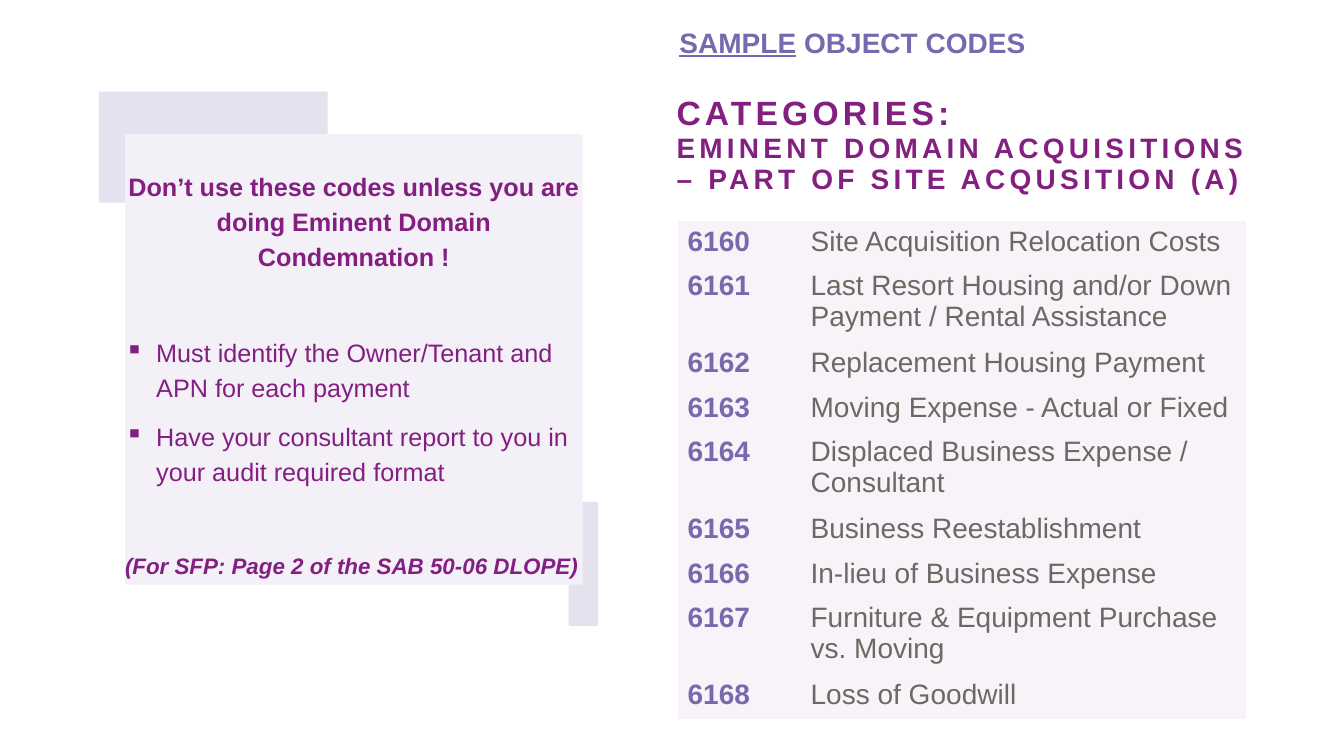
import pptx
import pptx.dml.color
import pptx.enum.shapes
import pptx.enum.text
import pptx.oxml.ns
import pptx.util
from lxml import etree
from pptx.util import Inches

PLUM = "841F82"
VIOLET = "7769AE"
GREY = "6B6963"
LAVENDER = "C5B9D9"
NOTE_FILL = "F3F1F7"
TABLE_FILL = "F7F3F8"

ACCENT_BLOCKS = [(0.98, 0.91, 2.27, 1.1), (5.64, 4.98, 0.29, 1.23)]
BULLET_INDENT = 0.31
ONE_LINE_ROW = 0.44
TWO_LINE_ROW = 0.76
WRAP_LENGTH = 35

OBJECT_CODES = [
    ("6160", "Site Acquisition Relocation Costs"),
    ("6161", "Last Resort Housing and/or Down Payment / Rental Assistance"),
    ("6162", "Replacement Housing Payment"),
    ("6163", "Moving Expense - Actual or Fixed"),
    ("6164", "Displaced Business Expense / Consultant"),
    ("6165", "Business Reestablishment"),
    ("6166", "In-lieu of Business Expense"),
    ("6167", "Furniture & Equipment Purchase vs. Moving"),
    ("6168", "Loss of Goodwill"),
]

BOLD_NOTE = {"size": 18, "bold": True}
PLAIN_NOTE = {"size": 18, "bold": False}
PAGE_NOTE = {"size": 16, "bold": True, "italic": True}
CENTER = pptx.enum.text.PP_ALIGN.CENTER
LEFT = pptx.enum.text.PP_ALIGN.LEFT

# wording, font, alignment, space before, bulleted
NOTES = [
    ("Don’t use these codes unless you are doing Eminent Domain Condemnation !",
     BOLD_NOTE, CENTER, 0, False),
    ("Must identify the Owner/Tenant and APN for each payment",
     PLAIN_NOTE, LEFT, 44, True),
    ("Have your consultant report to you in your audit required format",
     PLAIN_NOTE, LEFT, 10, True),
    ("(For SFP: Page 2 of the SAB 50-06 DLOPE)", PAGE_NOTE, LEFT, 44, False),
]


def rgb(hex_color):
    return pptx.dml.color.RGBColor.from_string(hex_color)


def set_all(target, values):
    for name, value in values.items():
        setattr(target, name, value)


def add_run(paragraph, text, color, size, spacing=None, **font_values):
    """Add a run; spacing is the gap between letters in points."""
    run = paragraph.add_run()
    run.text = text
    set_all(run.font, {"name": "Arial", "size": pptx.util.Pt(size), **font_values})
    run.font.color.rgb = rgb(color)
    if spacing:
        run.font._element.set("spc", str(spacing * 100))


def add_block(slide, bounds, color, alpha=None):
    """Add a plain rectangle; alpha is its opacity in percent."""
    block = slide.shapes.add_shape(
        pptx.enum.shapes.MSO_SHAPE.RECTANGLE, *map(Inches, bounds))
    block.shadow.inherit = False
    block.fill.solid()
    block.fill.fore_color.rgb = rgb(color)
    block.line.fill.background()
    if alpha:
        tint = block._element.spPr.find(".//" + pptx.oxml.ns.qn("a:srgbClr"))
        etree.SubElement(tint, pptx.oxml.ns.qn("a:alpha"), val=str(alpha * 1000))
    return block


def set_frame(frame, left=0, top=0, right=0, bottom=0):
    set_all(frame, {
        "word_wrap": True,
        "vertical_anchor": pptx.enum.text.MSO_ANCHOR.TOP,
        "margin_left": Inches(left), "margin_top": Inches(top),
        "margin_right": Inches(right), "margin_bottom": Inches(bottom),
    })


def add_text_box(slide, bounds, **margins):
    frame = slide.shapes.add_textbox(*map(Inches, bounds)).text_frame
    set_frame(frame, **margins)
    return frame.paragraphs[0]


def add_bullet(paragraph):
    properties = paragraph._p.get_or_add_pPr()
    indent = Inches(BULLET_INDENT)
    properties.set("marL", str(indent))
    properties.set("indent", str(-indent))
    bullet_color = etree.SubElement(properties, pptx.oxml.ns.qn("a:buClr"))
    etree.SubElement(bullet_color, pptx.oxml.ns.qn("a:srgbClr"), val=PLUM)
    etree.SubElement(properties, pptx.oxml.ns.qn("a:buChar"), char="▪")


def add_heading(slide):
    heading = add_text_box(slide, (6.64, 0.2, 5.03, 0.44),
                           left=0.1, top=0.05, right=0.1, bottom=0.05)
    add_run(heading, "SAMPLE", VIOLET, 20, bold=True, underline=True)
    add_run(heading, " OBJECT CODES", VIOLET, 20, bold=True)


def add_title(slide):
    title = add_text_box(slide, (6.71, 0.95, 6.51, 0.81))
    title.line_spacing = 0.93
    add_run(title, "CATEGORIES:", PLUM, 24, spacing=3, bold=True)
    for line in ("EMINENT DOMAIN ACQUISITIONS", "– PART OF SITE ACQUSITION (A)"):
        title.add_line_break()
        add_run(title, line, PLUM, 20, spacing=3, bold=True)


def add_notes(slide):
    frame = add_block(slide, (1.24, 1.33, 4.54, 4.47), NOTE_FILL).text_frame
    set_frame(frame, top=0.33)
    for index, (text, font, alignment, space, bulleted) in enumerate(NOTES):
        note = frame.add_paragraph() if index else frame.paragraphs[0]
        set_all(note, {"alignment": alignment, "line_spacing": 1.15,
                       "space_before": pptx.util.Pt(space)})
        if bulleted:
            add_bullet(note)
        add_run(note, text, PLUM, **font)


def add_code_table(slide):
    heights = [TWO_LINE_ROW if len(name) > WRAP_LENGTH else ONE_LINE_ROW
               for _, name in OBJECT_CODES]
    bounds = (6.72, 2.19, 5.64, sum(heights))
    table = slide.shapes.add_table(len(OBJECT_CODES), 2, *map(Inches, bounds)).table
    set_all(table, {"first_row": False, "horz_banding": False})
    for column, width in zip(table.columns, (1.22, 4.42)):
        column.width = Inches(width)
    for row, height, entry in zip(table.rows, heights, OBJECT_CODES):
        row.height = Inches(height)
        for cell, text, color, bold in zip(row.cells, entry, (VIOLET, GREY), (True, False)):
            cell.fill.solid()
            cell.fill.fore_color.rgb = rgb(TABLE_FILL)
            add_run(cell.text_frame.paragraphs[0], text, color, 20, bold=bold)
    # Borderless cells keep the table one even panel
    for cell in table.iter_cells():
        properties = cell._tc.get_or_add_tcPr()
        for position, side in enumerate(("lnL", "lnR", "lnT", "lnB")):
            border = etree.Element(pptx.oxml.ns.qn("a:" + side), w="0")
            etree.SubElement(border, pptx.oxml.ns.qn("a:noFill"))
            properties.insert(position, border)


def main():
    presentation = pptx.Presentation()
    set_all(presentation, {"slide_width": Inches(13.33), "slide_height": Inches(7.5)})
    slide = presentation.slides.add_slide(presentation.slide_layouts[6])
    for bounds in ACCENT_BLOCKS:
        add_block(slide, bounds, LAVENDER, alpha=42)
    add_title(slide)
    add_notes(slide)
    add_heading(slide)
    add_code_table(slide)
    presentation.save("out.pptx")


if __name__ == "__main__":
    main()
